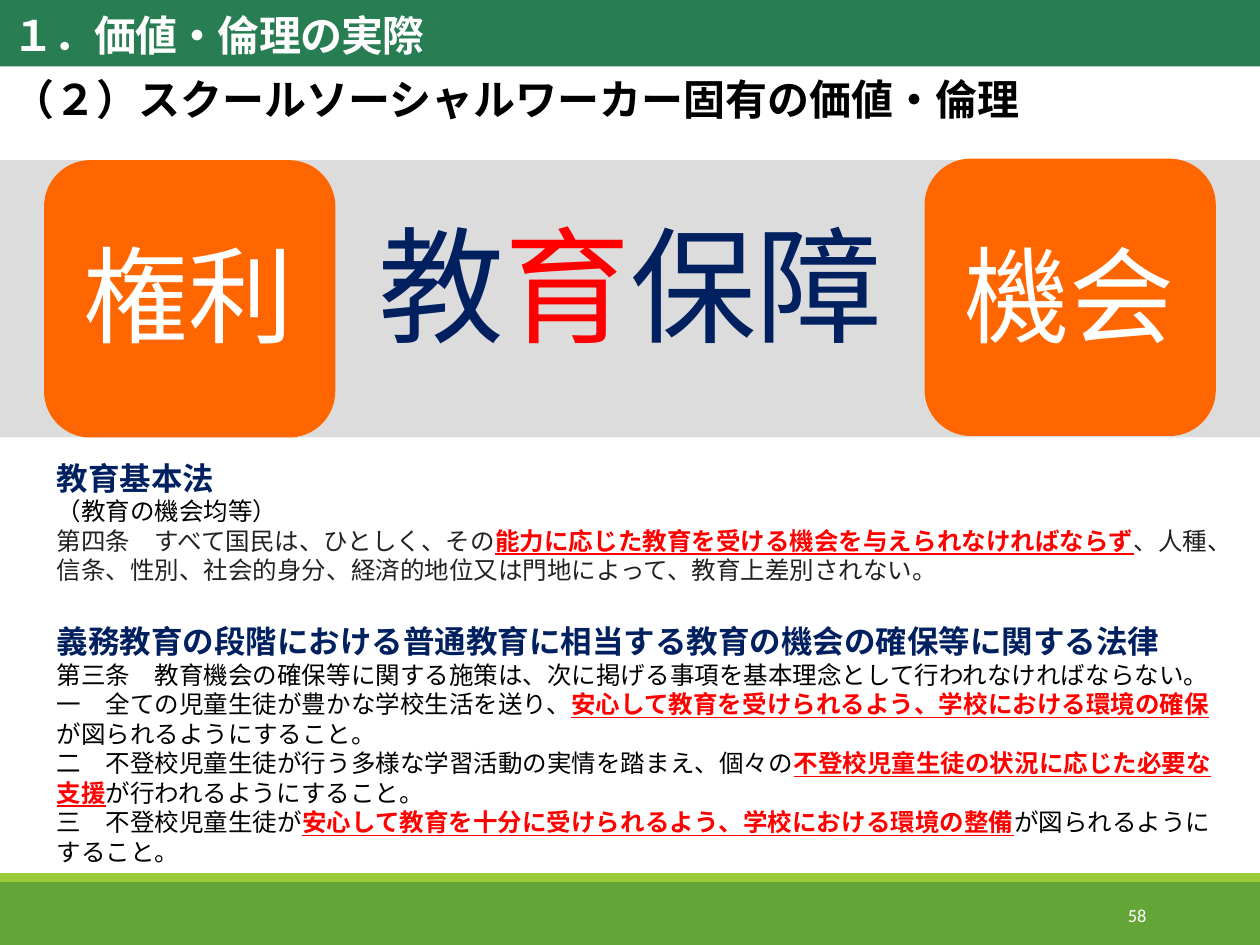
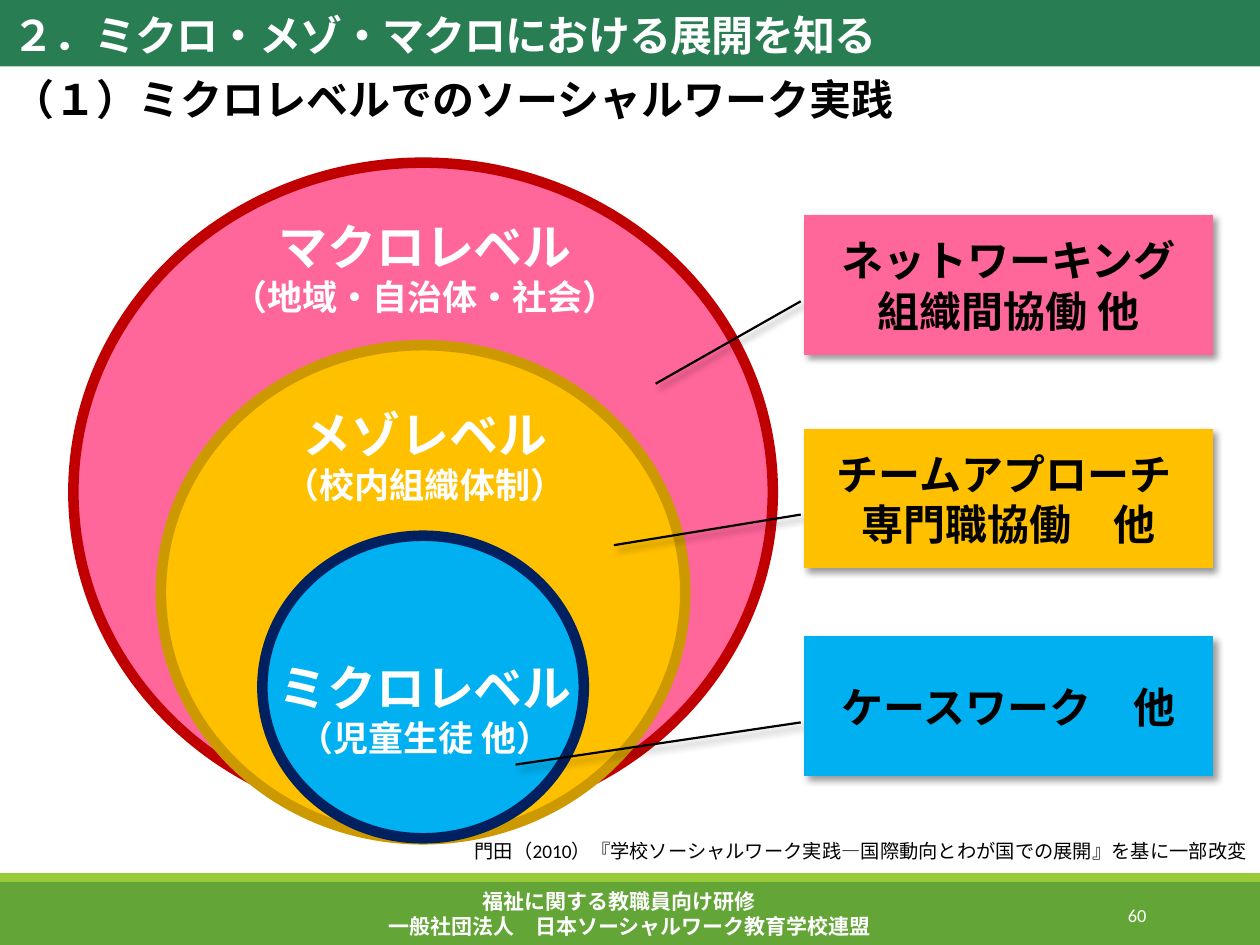
from lxml.etree import SubElement
from pptx import Presentation
from pptx.dml.color import RGBColor
from pptx.enum.dml import MSO_FILL
from pptx.enum.shapes import MSO_SHAPE
from pptx.enum.text import MSO_ANCHOR, MSO_AUTO_SIZE, PP_ALIGN
from pptx.oxml.ns import qn
from pptx.util import Cm, Pt

WIDTH, HEIGHT = 25.4, 19.05
JAPANESE, LATIN = "Noto Sans CJK JP", "Calibri"
WHITE, BLACK, RED, NAVY, BODY = "FFFFFF", "000000", "FF0000", "002060", "222222"
TEAL, GREEN, LIME, ORANGE, GRAY = "297D53", "63A537", "99CB38", "FF6600", "808080"
PINK, AMBER, SKY = "FF6699", "FFC000", "00B0F0"
LEFT, CENTER, RIGHT = PP_ALIGN.LEFT, PP_ALIGN.CENTER, PP_ALIGN.RIGHT


def rgb(value):
    return RGBColor.from_string(value)


def child(parent, tag, **attributes):
    return SubElement(parent, qn(tag), {key: str(value) for key, value in attributes.items()})


class Deck:
    def __init__(self):
        self.presentation = Presentation()
        self.presentation.slide_width = Cm(WIDTH)
        self.presentation.slide_height = Cm(HEIGHT)
        self.slide = None

    def new_slide(self, heading, subheading, number):
        self.slide = self.presentation.slides.add_slide(self.presentation.slide_layouts[6])
        self.shape((0, 17.78, WIDTH, 1.27), GREEN)
        self.shape((0, 17.6, WIDTH, 0.18), LIME)
        header = self.shape((0, -0.18, WIDTH, 1.52), TEAL)
        self.put_text(header, [heading], 24, WHITE, bold=True, anchor=MSO_ANCHOR.BOTTOM, grow=True)
        title = header.text_frame.paragraphs[0]
        title.line_spacing = 1.5
        title.runs[0].font._element.set("spc", "-50")
        self.text((0, 1.35, WIDTH, 1.27), [subheading], 24, bold=True)
        self.text((20.62, 17.93, 2.74, 1.02), [number], 10.5, WHITE, align=RIGHT,
                  anchor=MSO_ANCHOR.MIDDLE, grow=False, font=LATIN)

    def shape(self, box, fill, kind=MSO_SHAPE.RECTANGLE, line=None, line_width=0, opacity=100):
        shape = self.slide.shapes.add_shape(kind, *map(Cm, box))
        shape.shadow.inherit = False
        shape.fill.solid()
        shape.fill.fore_color.rgb = rgb(fill)
        if opacity < 100:
            color = shape._element.spPr.find(qn("a:solidFill"))[0]
            child(color, "a:alpha", val=opacity * 1000)
        if line:
            shape.line.color.rgb = rgb(line)
            shape.line.width = Pt(line_width)
        else:
            shape.line.fill.background()
        return shape

    def text(self, box, paragraphs, size, color=BLACK, wrap=True, grow=True, **style):
        holder = self.slide.shapes.add_textbox(*map(Cm, box))
        self.put_text(holder, paragraphs, size, color, wrap=wrap, grow=grow, **style)
        return holder

    def put_text(self, holder, paragraphs, size, color, bold=False, align=LEFT,
                 anchor=MSO_ANCHOR.TOP, wrap=True, grow=False, font=JAPANESE):
        frame = holder.text_frame
        frame.word_wrap = wrap
        frame.vertical_anchor = anchor
        frame.auto_size = MSO_AUTO_SIZE.SHAPE_TO_FIT_TEXT if grow else MSO_AUTO_SIZE.NONE
        for index, parts in enumerate(paragraphs):
            paragraph = frame.add_paragraph() if index else frame.paragraphs[0]
            paragraph.alignment = align
            self.style(paragraph.font, size, color, bold, font)
            for part in [parts] if isinstance(parts, str) else parts:
                words, accent = (part, None) if isinstance(part, str) else part
                run = paragraph.add_run()
                run.text = words
                if accent:
                    run.font.color.rgb = rgb(accent)

    def style(self, font, size, color, bold, name):
        font.size = Pt(size)
        font.bold = bold
        font.color.rgb = rgb(color)
        font.name = name
        child(font._element, "a:ea", typeface=JAPANESE)

    def emphasize(self, holder):
        for paragraph in holder.text_frame.paragraphs:
            for run in paragraph.runs:
                if run.font.fill.type == MSO_FILL.SOLID and run.font.color.rgb == rgb(RED):
                    run.font.bold = True
                    run.font.underline = True

    def level(self, top, diameters, fill, rim):
        width, height = diameters
        self.shape((8.53 - width / 2, top, width, height), fill, MSO_SHAPE.OVAL, rim, 6)

    def level_label(self, top, name, scope):
        label = self.text((4.39, top, 8.36, 2.31), [name, scope], 28, WHITE,
                          wrap=False, bold=True, align=CENTER)
        label.text_frame.paragraphs[1].font.size = Pt(20)

    def callout(self, top, lines, fill, target):
        callout = self.shape((16.2, top, 8.26, 2.82), fill,
                             MSO_SHAPE.LINE_CALLOUT_1_NO_BORDER, BLACK, 1.25)
        for index, value in enumerate((0.615, -0.007, *target)):
            callout.adjustments[index] = value
        effects = callout._element.spPr.find(qn("a:effectLst"))
        shadow = child(effects, "a:outerShdw", blurRad=Pt(4), dist=Pt(3), dir=45 * 60000,
                       algn="tl", rotWithShape=0)
        child(child(shadow, "a:srgbClr", val=BLACK), "a:alpha", val=40000)
        self.put_text(callout, lines, 24, BLACK, bold=True, align=CENTER, anchor=MSO_ANCHOR.MIDDLE)
        for paragraph in callout.text_frame.paragraphs:
            properties = paragraph.font._element
            outline = child(properties, "a:ln", w=Pt(1.5))
            child(child(outline, "a:solidFill"), "a:srgbClr", val=WHITE)
            properties.insert(0, outline)


def values_slide(deck):
    deck.new_slide("１．価値・倫理の実際", "（２）スクールソーシャルワーカー固有の価値・倫理", "58")
    deck.shape((0, 3.23, WIDTH, 5.59), GRAY, opacity=27)
    deck.text((7.32, 4.06, 10.77, 3.33), [["教", ("育", RED), "保障"]], 72, NAVY,
              wrap=False, align=CENTER)
    for word, left, top in (("権利", 0.89, 3.23), ("機会", 18.64, 3.2)):
        deck.shape((left, top, 5.87, 5.59), ORANGE, MSO_SHAPE.ROUNDED_RECTANGLE)
        deck.text((left, 4.52, 5.83, 2.82), [word], 60, WHITE, align=CENTER)

    laws = deck.text((0.89, 9.12, 23.8, 8.56), [
        "教育基本法",
        "（教育の機会均等）",
        [("第四条　すべて国民は、ひとしく、その", BODY),
         ("能力に応じた教育を受ける機会を与えられなければならず", RED),
         ("、人種、信条、性別、社会的身分、経済的地位又は門地によって、教育上差別されない。", BODY)],
        "義務教育の段階における普通教育に相当する教育の機会の確保等に関する法律",
        "第三条　教育機会の確保等に関する施策は、次に掲げる事項を基本理念として行われなければならない。",
        ["一　全ての児童生徒が豊かな学校生活を送り、",
         ("安心して教育を受けられるよう、学校における環境の確保", RED),
         "が図られるようにすること。"],
        ["二　不登校児童生徒が行う多様な学習活動の実情を踏まえ、個々の",
         ("不登校児童生徒の状況に応じた必要な支援", RED),
         "が行われるようにすること。"],
        ["三　不登校児童生徒が",
         ("安心して教育を十分に受けられるよう、学校における環境の整備", RED),
         "が図られるようにすること。"],
    ], 14)
    deck.emphasize(laws)
    basic_act, opportunity_act = (laws.text_frame.paragraphs[index] for index in (0, 3))
    for law_name in (basic_act, opportunity_act):
        law_name.font.size = Pt(18)
        law_name.font.color.rgb = rgb(NAVY)
        law_name.font.bold = True
    opportunity_act.space_before = Pt(21.5)


def levels_slide(deck):
    deck.new_slide("２．ミクロ・メゾ・マクロにおける展開を知る",
                   "（１）ミクロレベルでのソーシャルワーク実践", "60")
    deck.level(3.28, (14.1, 13.28), PINK, "C00000")
    deck.level(6.96, (10.57, 9.96), AMBER, "CC9900")
    deck.level(10.8, (6.48, 6.1), SKY, NAVY)
    deck.level_label(4.24, "マクロレベル", "（地域・自治体・社会）")
    deck.level_label(8.03, "メゾレベル", "（校内組織体制）")
    deck.level_label(13.13, "ミクロレベル", "（児童生徒 他）")

    deck.callout(12.83, ["ケースワーク　他"], SKY, (0.917, -0.703))
    deck.callout(8.64, ["チームアプローチ ", "専門職協働　他"], AMBER, (0.834, -0.463))
    deck.callout(4.34, ["ネットワーキング", "組織間協働 他"], PINK, (1.204, -0.361))
    deck.text((5.28, 16.79, 20.12, 0.74),
              ["門田（2010）『学校ソーシャルワーク実践―国際動向とわが国での展開』を基に一部改変"],
              11, align=RIGHT, font=LATIN)
    deck.text((0, 17.78, WIDTH, 1.27),
              ["福祉に関する教職員向け研修　", "一般社団法人　日本ソーシャルワーク教育学校連盟"],
              12, WHITE, bold=True, align=CENTER)


def main():
    deck = Deck()
    values_slide(deck)
    levels_slide(deck)
    deck.presentation.save("out.pptx")


if __name__ == "__main__":
    main()
